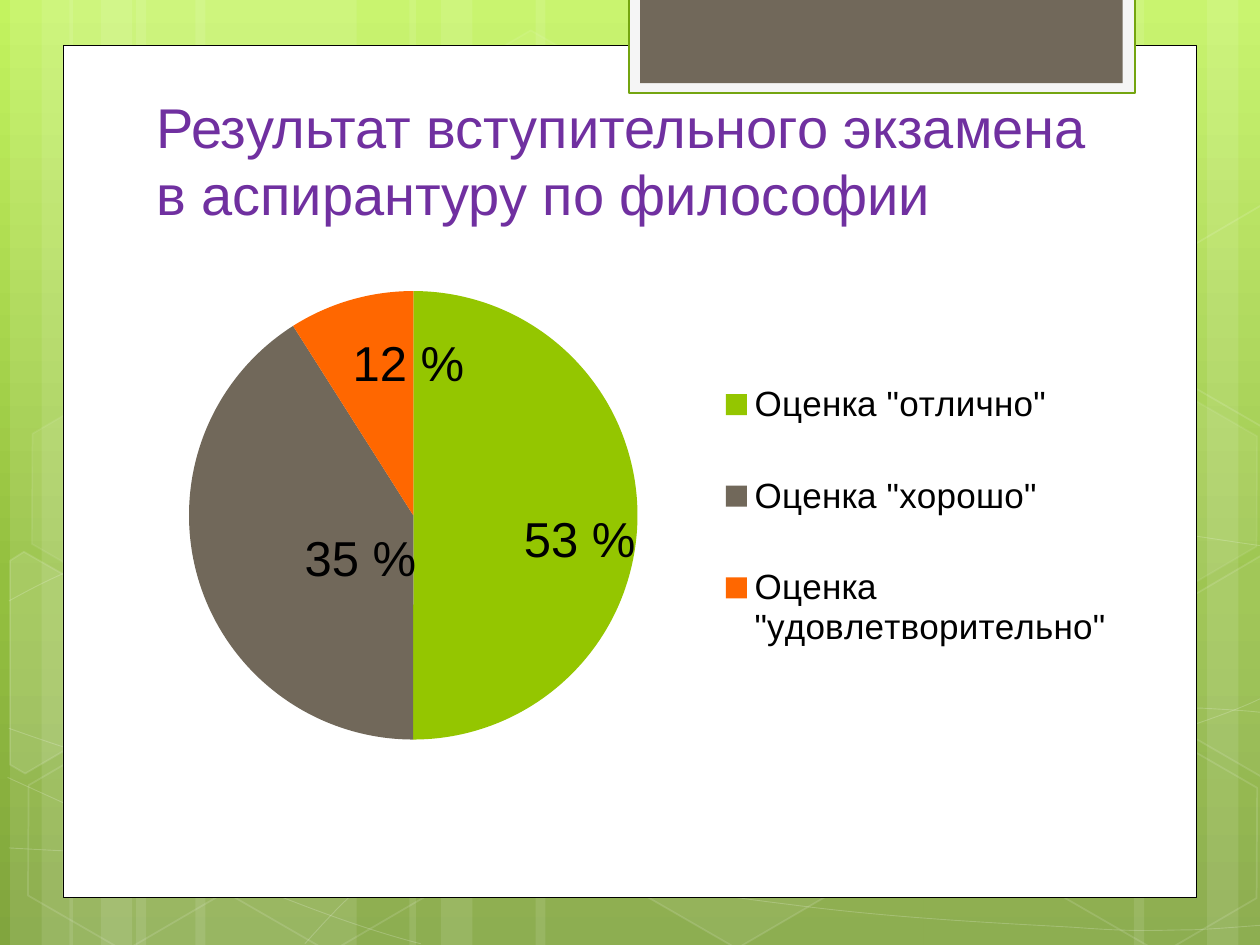
import copy
from dataclasses import dataclass

import lxml.etree
import pptx
import pptx.chart.data
import pptx.dml.color
import pptx.enum.chart
import pptx.enum.shapes
import pptx.enum.text
import pptx.oxml
import pptx.oxml.ns
import pptx.util

SHAPE = pptx.enum.shapes.MSO_SHAPE
qn = pptx.oxml.ns.qn
COLUMNS, ROWS = 100, 75  # square grid cells over the slide
CELL = pptx.util.Inches(0.1)


@dataclass(frozen=True)
class Theme:
    white: str = "FFFFFF"
    black: str = "000000"
    title: str = "7030A0"
    frame: str = "F5F5F5"
    frame_line: str = "74A510"
    tab: str = "71685A"
    sky: tuple = ((0, "C3F35F"), (0.62, "93BF3F"), (1, "81A53E"))
    slices: tuple = ("94C600", "71685A", "FF6700")
    font: str = "Arial"
    chart_font: str = "TeX Gyre Adventor"
    title_size: int = 32
    label_size: int = 28
    legend_size: int = 20
    chart_size: int = 18


T = Theme()

# Translucent bands: left column, width
STRIPES = [(10.8, 17.5), (0.8, 5), (3.3, 8.3), (15.5, 17.5), (5.5, 5), (8, 8.3),
           (73.3, 17.5), (95.8, 5), (90, 8.3), (42.5, 30.8), (32.5, 5), (35, 8.3)]

# Waves: start point, then cubic segments (two controls and an end)
WAVES = [
    [(0.7, 67.3), (6.1, 67.6), (11.5, 67.9), (19, 67.8), (26.5, 67.7), (35.8, 67.5),
     (45.8, 66.5), (55.8, 65.5), (70, 63.6), (79.2, 61.7), (88.3, 59.8), (97.7, 56.8),
     (100.7, 55.1)],
    [(0.7, 47.7), (3.6, 46.1), (6.5, 44.6), (12.1, 43.1), (17.8, 41.6), (25.9, 39.4),
     (34.7, 38.7), (43.6, 38), (54.4, 37.9), (65.4, 38.7), (76.4, 39.5), (94.7, 42.6),
     (100.7, 43.4)],
    [(0.6, 61.7), (12.7, 67.2), (24.7, 72.7), (33.4, 74.9)],
    [(0.7, 57.8), (3.8, 58.9), (7, 60), (12.8, 61.6), (18.6, 63.1), (27.3, 65.6),
     (35.7, 67.3), (44, 69), (54.5, 70.8), (62.8, 71.8), (71.1, 72.9), (80, 73.3),
     (85.3, 73.6), (90.5, 74), (91.9, 73.8), (94.5, 73.8), (97.1, 73.7), (98.9, 73.5),
     (100.7, 73.4)],
    [(24.2, 74.9), (26, 72.9), (27.8, 70.9), (30.2, 69.1), (32.6, 67.3), (36, 65.3),
     (38.8, 63.9), (41.6, 62.5), (43.3, 61.9), (47, 60.9), (50.6, 59.9), (57.3, 58.5),
     (60.8, 57.8), (64.4, 57.1), (64.9, 57.1), (68, 56.9), (71.1, 56.6), (76, 56.3),
     (79.4, 56.2), (82.9, 56.1), (88.6, 56.2), (88.6, 56.2), (90.8, 56.2), (93, 56.2),
     (95.3, 56.2), (97.1, 56.3), (98.8, 56.4), (99.7, 56.5), (100.6, 56.6), (100.3, 56.5),
     (100.6, 56.6)],
]

# Hexagons: left, top, fill opacity (None for no fill), line opacity
HEXAGONS = [(33.4, 3.6, 4, 8), (49.7, 58.9, 6, 12), (1.1, 59.1, None, 12),
            (1.4, 31.2, 7, 8), (17.4, 59.2, None, 12), (75.3, 45.3, 10, 12),
            (83.4, 59.3, None, 12), (83.4, 31.4, 7, 8)]

# Hexagons cut by the slide's edge: corner points, fill opacity
CUT_HEXAGONS = [
    ([(0.8, 44.5), (1.9, 43.8), (9.6, 48.2), (9.5, 57), (2, 61.4), (0.8, 60.7)], 10),
    ([(92.6, 48.5), (100.1, 44.1), (100.9, 44.6), (100.9, 61.3), (100.2, 61.7),
      (92.6, 57.3)], 4),
    ([(92.6, 20.7), (100.1, 16.3), (101, 16.8), (100.9, 33.5), (100.2, 33.9),
      (92.6, 29.5)], None),
]

# Chart and its parts: left, top, width, height
CHART = (8.3, 21.8, 81.9, 38.4)
PIE = (15, 23.1, 35.6, 35.6)
LEGEND = (55.2, 26.4, 35, 29.1)


def grid(*cells):
    return [pptx.util.Emu(round(n * CELL)) for n in cells]


def rgb(value):
    return pptx.dml.color.RGBColor.from_string(value)


def set_opacity(element, percent):
    color = element.find(".//" + qn("a:srgbClr"))
    lxml.etree.SubElement(color, qn("a:alpha")).set("val", str(percent * 1000))


def paint(sp, fill=None, line=None, width=1, opacity=100, line_opacity=100):
    sp.shadow.inherit = False
    if fill:
        sp.fill.solid()
        sp.fill.fore_color.rgb = rgb(fill)
        if opacity < 100:
            set_opacity(sp.element.spPr.find(qn("a:solidFill")), opacity)
    else:
        sp.fill.background()
    if line:
        sp.line.color.rgb = rgb(line)
        sp.line.width = pptx.util.Pt(width)
        if line_opacity < 100:
            set_opacity(sp.element.spPr.find(qn("a:ln")), line_opacity)
    else:
        sp.line.fill.background()


def add_box(s, box, **style):
    paint(s.shapes.add_shape(SHAPE.RECTANGLE, *grid(*box)), **style)


def add_outline(s, points, close):
    start, *rest = [grid(*point) for point in points]
    builder = s.shapes.build_freeform(*start)
    builder.add_line_segments(rest, close=close)
    return builder.convert_to_shape()


def add_wave(s, points):
    sp = add_outline(s, points, close=False)
    # Every three straight segments become one cubic curve
    lines = sp.element.findall(".//" + qn("a:lnTo"))
    for i in range(0, len(lines), 3):
        curve = lxml.etree.SubElement(lines[i].getparent(), qn("a:cubicBezTo"))
        for line in lines[i:i + 3]:
            curve.append(line[0])
            line.getparent().remove(line)
    paint(sp, line=T.white, width=0.5, line_opacity=20)


def add_hexagon(s, left, top, opacity, line_opacity):
    sp = s.shapes.add_shape(SHAPE.HEXAGON, *grid(left, top, 17.5, 15.2))
    sp.adjustments[0] = 0.285
    sp.rotation = 30
    paint(sp, T.white if opacity else None, T.white, 1, opacity, line_opacity)


def set_font(font, size, color, name):
    font.size = pptx.util.Pt(size)
    font.color.rgb = rgb(color)
    font.name = name


def add_text(s, box, text, size, color, wrap=True, anchor="TOP"):
    tf = s.shapes.add_textbox(*grid(*box)).text_frame
    tf.word_wrap = wrap
    tf.vertical_anchor = pptx.enum.text.MSO_ANCHOR[anchor]
    tf.text = text
    set_font(tf.paragraphs[0].runs[0].font, size, color, T.font)


def set_background(s):
    fill = s.background.fill
    fill.gradient()
    fill.gradient_angle = 270
    first = s.element.find(".//" + qn("a:gs"))
    first.addnext(copy.deepcopy(first))
    for stop, (position, color) in zip(fill.gradient_stops, T.sky):
        stop.position = position
        stop.color.rgb = rgb(color)


def place(element, box, index, target=""):
    """Fix a chart part at a box of the slide's grid."""
    for old in element.findall(qn("c:layout")):
        element.remove(old)
    left, top, width, height = CHART
    shares = ((box[0] - left) / width, (box[1] - top) / height,
              box[2] / width, box[3] / height)
    values = "".join(f'<c:{name} val="{share:.4f}"/>' for name, share in zip("xywh", shares))
    element.insert(index, pptx.oxml.parse_xml(
        f'<c:layout {pptx.oxml.ns.nsdecls("c")}><c:manualLayout>{target}'
        f'<c:xMode val="edge"/><c:yMode val="edge"/>{values}</c:manualLayout></c:layout>'))


def add_pie(s):
    data = pptx.chart.data.CategoryChartData()
    data.categories = ['Оценка "отлично"', 'Оценка "хорошо"', 'Оценка "удовлетворительно"']
    data.add_series("Series 1", (50, 41, 9))
    chart = s.shapes.add_chart(pptx.enum.chart.XL_CHART_TYPE.PIE, *grid(*CHART), data).chart
    chart.has_title = False
    set_font(chart.font, T.chart_size, T.black, T.chart_font)
    for i, color in enumerate(T.slices):
        fill = chart.plots[0].series[0].points[i].format.fill
        fill.solid()
        fill.fore_color.rgb = rgb(color)
    chart.has_legend = True
    legend = chart.legend
    legend.position = pptx.enum.chart.XL_LEGEND_POSITION.RIGHT
    legend.include_in_layout = False
    set_font(legend.font, T.legend_size, T.black, T.font)
    root = chart.element
    place(root.find(".//" + qn("c:plotArea")), PIE, 0, '<c:layoutTarget val="inner"/>')
    place(root.find(".//" + qn("c:legend")), LEGEND, 1)


def add_backdrop(s):
    set_background(s)
    for left, width in STRIPES:
        add_box(s, (left, 0, width, ROWS), fill=T.white, opacity=10)
    for wave in WAVES:
        add_wave(s, wave)
    for hexagon in HEXAGONS:
        add_hexagon(s, *hexagon)
    for corners, opacity in CUT_HEXAGONS:
        paint(add_outline(s, corners, close=True), T.white if opacity else None, T.white,
              1, opacity, 12)


def main():
    prs = pptx.Presentation()
    prs.slide_width, prs.slide_height = grid(COLUMNS, ROWS)
    s = prs.slides.add_slide(prs.slide_layouts[6])
    add_backdrop(s)
    # White page with the tab at its top
    add_box(s, (5, 3.6, 90, 67.6), fill=T.white, line=T.black, width=0.5)
    add_box(s, (49.9, -0.2, 40.2, 7.6), fill=T.frame, line=T.frame_line, width=1.25)
    add_box(s, (50.8, -0.2, 38.3, 6.8), fill=T.tab)
    # Title, pie and its labels
    add_text(s, (11.4, 6, 76.8, 12.5), "Результат вступительного экзамена в аспирантуру по философии",
             T.title_size, T.title, anchor="BOTTOM")
    add_pie(s)
    for left, top, text in ((40.6, 39.9, "53 %"), (23.2, 41.4, "35 %"), (27, 25.9, "12 %")):
        add_text(s, (left, top, 11, 5.7), text, T.label_size, T.black, wrap=False)
    prs.save("out.pptx")


if __name__ == "__main__":
    main()
